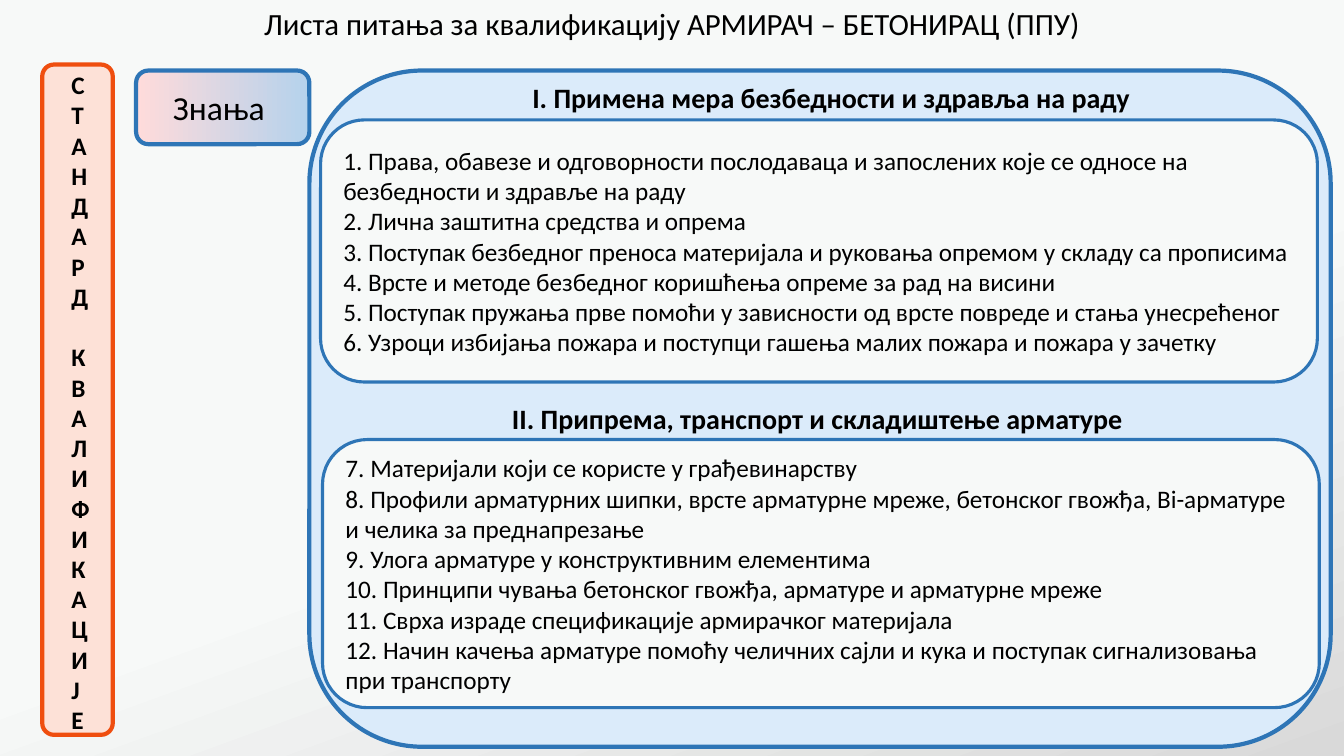
from dataclasses import dataclass

from pptx import Presentation
from pptx.dml.color import RGBColor
from pptx.enum.shapes import MSO_SHAPE
from pptx.enum.text import MSO_ANCHOR, MSO_AUTO_SIZE, PP_ALIGN
from pptx.util import Pt

ROUNDED = MSO_SHAPE.ROUNDED_RECTANGLE
MIDDLE = MSO_ANCHOR.MIDDLE
GROW = MSO_AUTO_SIZE.SHAPE_TO_FIT_TEXT
LEFT = PP_ALIGN.LEFT
CENTER = PP_ALIGN.CENTER

FONT = "Calibri"
BLACK = "000000"
BLUE = "2E75B6"
PALE_BLUE = "DBEBFA"
OFF_WHITE = "F7F9F8"
ORANGE = "EF4E0F"
PEACH = "FDE1D7"

SAFETY_QUESTIONS = [
    "1. Права, обавезе и одговорности послодаваца и запослених које се односе на безбедности и здравље на раду",
    "2. Лична заштитна средства и опрема",
    "3. Поступак безбедног преноса материјала и руковања опремом у складу са прописима",
    "4. Врсте и методе безбедног коришћења опреме за рад на висини",
    "5. Поступак пружања прве помоћи у зависности од врсте повреде и стања унесрећеног",
    "6. Узроци избијања пожара и поступци гашења малих пожара и пожара у зачетку",
]
REINFORCEMENT_QUESTIONS = [
    "7. Материјали који се користе у грађевинарству",
    "8. Профили арматурних шипки, врсте арматурне мреже, бетонског гвожђа, Bi-арматуре и челика за преднапрезање",
    "9. Улога арматуре у конструктивним елементима",
    "10. Принципи чувања бетонског гвожђа, арматуре и арматурне мреже",
    "11. Сврха израде спецификације армирачког материјала",
    "12. Начин качења арматуре помоћу челичних сајли и кука и поступак сигнализовања при транспорту",
]


@dataclass
class Box:
    left: float
    top: float
    width: float
    height: float


@dataclass
class Label:
    box: Box
    lines: list[str]
    size: float
    bold: bool = False
    alignment: PP_ALIGN = CENTER


@dataclass
class Panel:
    box: Box
    fills: list[str]
    line: str
    line_width: float = 3
    lines: tuple[str, ...] | list[str] = ()
    size: float = 18
    alignment: PP_ALIGN = LEFT


ELEMENTS = [
    Panel(Box(221, 50.4, 729.5, 483), [PALE_BLUE], BLUE),
    Label(Box(236, 54, 715.5, 31.5),
          ["I. Примена мера безбедности и здравља на раду"], 20, True),
    Panel(Box(230.4, 314, 712, 191.5), [OFF_WHITE], BLUE, 2.25,
          REINFORCEMENT_QUESTIONS),
    Panel(Box(229, 85.7, 712, 187.2), [OFF_WHITE], BLUE, 2.25,
          SAFETY_QUESTIONS),
    Label(Box(221, 283, 725.8, 31.5),
          ["II. Припрема, транспорт и складиштење арматуре"], 20, True),
    Label(Box(0, 0, 960, 34),
          ["Листа питања за квалификацију АРМИРАЧ – БЕТОНИРАЦ (ППУ)"], 22),
    Panel(Box(30.2, 46.1, 50.4, 478.8), [PEACH], ORANGE),
    Label(Box(43.9, 46.1, 23, 486.7),
          ["СТАНДАРД", " КВАЛИФИКАЦИЈЕ"], 18, True, LEFT),
    Panel(Box(97.2, 50.4, 123.8, 52.6), ["FFDBDB", "B5D2EC"], BLUE, 3,
          ["Знања "], 24, CENTER),
]


def color(value: str) -> RGBColor:
    return RGBColor.from_string(value)


def position(box: Box) -> tuple[Pt, Pt, Pt, Pt]:
    return Pt(box.left), Pt(box.top), Pt(box.width), Pt(box.height)


def fill_gradient(fill, colors: list[str], angle: float, end: float) -> None:
    fill.gradient()
    fill.gradient_angle = angle
    for stop, value, place in zip(fill.gradient_stops, colors, (0, end)):
        stop.color.rgb = color(value)
        stop.position = place


def write_text(text_frame, element: Label | Panel, bold: bool) -> None:
    text_frame.text = "\n".join(element.lines)
    text_frame.word_wrap = True
    for paragraph in text_frame.paragraphs:
        paragraph.alignment = element.alignment
        for run in paragraph.runs:
            run.font.name = FONT
            run.font.size = Pt(element.size)
            run.font.bold = bold
            run.font.color.rgb = color(BLACK)


def add_label(slide, label: Label) -> None:
    text_frame = slide.shapes.add_textbox(*position(label.box)).text_frame
    write_text(text_frame, label, label.bold)
    text_frame.auto_size = GROW


def add_panel(slide, panel: Panel) -> None:
    shape = slide.shapes.add_shape(ROUNDED, *position(panel.box))
    shape.shadow.inherit = False
    if len(panel.fills) > 1:
        fill_gradient(shape.fill, panel.fills, 0, 1)
    else:
        shape.fill.solid()
        shape.fill.fore_color.rgb = color(panel.fills[0])
    shape.line.color.rgb = color(panel.line)
    shape.line.width = Pt(panel.line_width)
    if panel.lines:
        write_text(shape.text_frame, panel, False)
        shape.text_frame.vertical_anchor = MIDDLE


def main() -> None:
    presentation = Presentation()
    presentation.slide_width = Pt(960)
    presentation.slide_height = Pt(540)
    slide = presentation.slides.add_slide(presentation.slide_layouts[6])
    fill_gradient(slide.background.fill, ["D9D9D9", OFF_WHITE], 110, 0.45)
    for element in ELEMENTS:
        if isinstance(element, Panel):
            add_panel(slide, element)
        else:
            add_label(slide, element)
    presentation.save("out.pptx")


if __name__ == "__main__":
    main()
